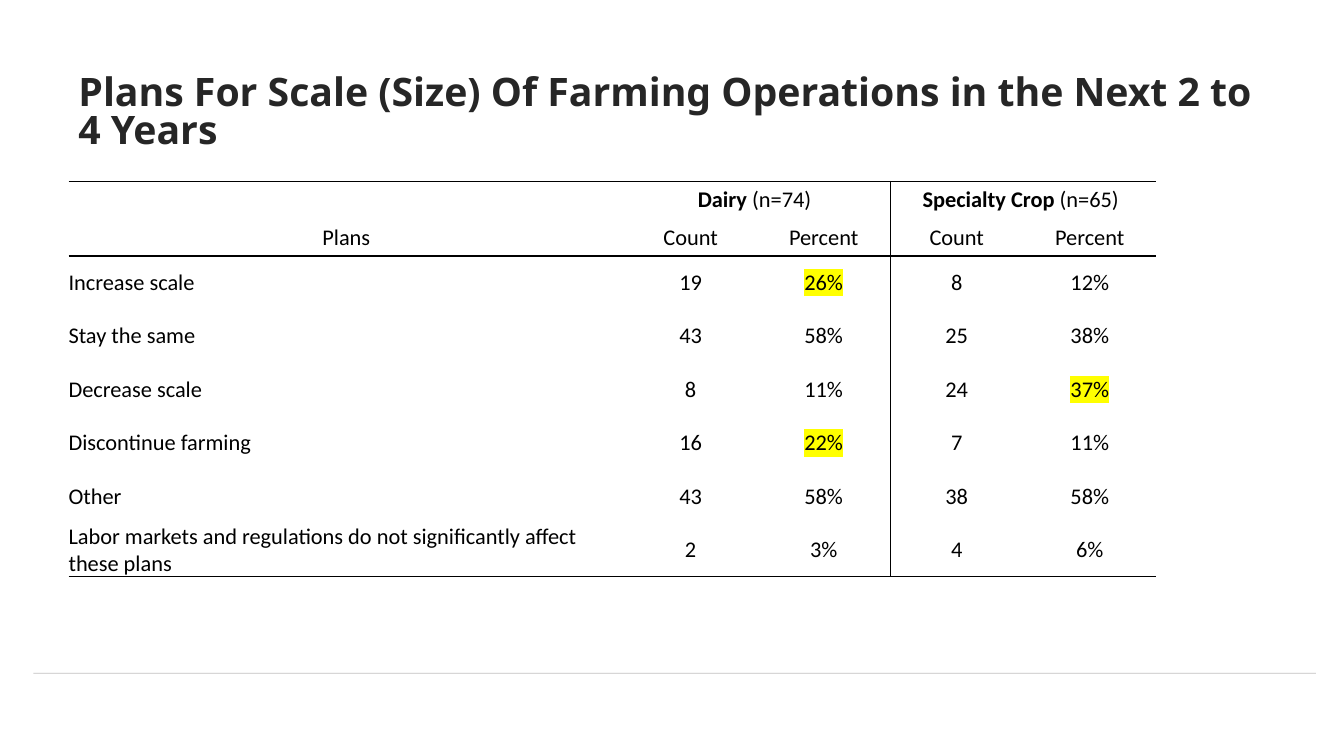
from lxml import etree
from pptx import Presentation
from pptx.dml.color import RGBColor
from pptx.enum.shapes import MSO_CONNECTOR
from pptx.enum.text import MSO_ANCHOR, PP_ALIGN
from pptx.oxml.ns import qn
from pptx.util import Inches, Pt

STRAIGHT = MSO_CONNECTOR.STRAIGHT
TOP, MIDDLE = MSO_ANCHOR.TOP, MSO_ANCHOR.MIDDLE
LEFT, CENTER = PP_ALIGN.LEFT, PP_ALIGN.CENTER
BLACK = RGBColor(0x00, 0x00, 0x00)
CHARCOAL = RGBColor(0x26, 0x26, 0x26)
GRAY = RGBColor(0xAF, 0xAB, 0xAB)
YELLOW = RGBColor(0xFF, 0xFF, 0x00)
PLAIN_STYLE = "{2D5ABB26-0587-4C30-8999-92F81FD0307C}"

MARGIN = 0.68
COLUMN_WIDTHS = [5.51] + [1.32] * 4
HEADER_ROWS, HEADER_HEIGHT, BODY_HEIGHT = 2, 0.37, 0.53
GROUPS = {1: ("Dairy ", "(n=74) "), 3: ("Specialty Crop ", "(n=65) ")}
HEADINGS = ["Plans", "Count", "Percent", "Count", "Percent"]
PLANS = [
    ["Increase scale", "19", "26%", "8", "12%"],
    ["Stay the same", "43", "58%", "25", "38%"],
    ["Decrease scale", "8", "11%", "24", "37%"],
    ["Discontinue farming", "16", "22%", "7", "11%"],
    ["Other", "43", "58%", "38", "58%"],
    ["Labor markets and regulations do not significantly affect these plans",
     "2", "3%", "4", "6%"],
]
HIGHLIGHTED = {(2, 2), (4, 4), (5, 2)}


def add_run(para, text, size, font, color, bold=False, highlight=None):
    """Append one formatted run to a paragraph."""
    span = para.add_run()
    span.text = text
    span.font.size = Pt(size)
    span.font.bold = bold
    span.font.color.rgb = color
    span.font.name = font
    if highlight is not None:
        mark = etree.Element(qn("a:highlight"))
        etree.SubElement(mark, qn("a:srgbClr"), val=str(highlight))
        span.font.fill._xPr.find(qn("a:solidFill")).addnext(mark)


def add_title(page, text):
    """Add the slide heading."""
    box = page.shapes.add_textbox(
        Inches(MARGIN), Inches(0.7), Inches(11.97), Inches(1.25))
    frame = box.text_frame
    frame.word_wrap = True
    frame.vertical_anchor = TOP
    para = frame.paragraphs[0]
    para.line_spacing = 0.81
    add_run(para, text, 28, "Noto Sans", CHARCOAL, bold=True)


def add_footer_rule(page):
    """Draw the faint line above the footer."""
    height = Inches(6.68)
    rule = page.shapes.add_connector(
        STRAIGHT, Inches(0.33), height, Inches(13.05), height)
    rule.line.color.rgb = GRAY
    rule.line.width = Pt(0.5)
    color = rule.line._ln.find(".//" + qn("a:srgbClr"))
    etree.SubElement(color, qn("a:alpha"), val="75000")
    etree.SubElement(rule._element.spPr, qn("a:effectLst"))


def set_borders(cell, widths):
    """Set the four cell borders, with no line on sides that have no width."""
    properties = cell._tc.get_or_add_tcPr()
    for side in "LRTB":
        width = widths.get(side, 0)
        line = etree.SubElement(properties, qn("a:ln" + side), w=str(Pt(width)))
        if width:
            fill = etree.SubElement(line, qn("a:solidFill"))
            etree.SubElement(fill, qn("a:srgbClr"), val=str(BLACK))
        else:
            etree.SubElement(line, qn("a:noFill"))


def border_widths(row, column, last_row):
    """Give the border widths that a grid position calls for."""
    widths = {}
    if row in (0, HEADER_ROWS):
        widths["T"] = 1
    if row in (HEADER_ROWS - 1, last_row):
        widths["B"] = 1
    if column == 2 or (row == 0 and column == 1):
        widths["R"] = 0.5
    if column == 3:
        widths["L"] = 0.5
    return widths


def fill_cell(cell, row, column, text):
    """Write one table cell."""
    cell.vertical_anchor = MIDDLE
    if row >= HEADER_ROWS or not text:
        cell.margin_left = cell.margin_right = 0
        cell.margin_top = cell.margin_bottom = 0
    para = cell.text_frame.paragraphs[0]
    is_label = row >= HEADER_ROWS and column == 0
    para.alignment = LEFT if is_label else CENTER
    if row == 0 and column in GROUPS:
        name, sample = GROUPS[column]
        add_run(para, name, 16, "Calibri", BLACK, bold=True)
        add_run(para, sample, 16, "Calibri", BLACK)
    elif text:
        highlight = YELLOW if (row, column) in HIGHLIGHTED else None
        add_run(para, text, 16, "Calibri", BLACK, highlight=highlight)


def add_plans_table(page):
    """Add the table of plans by farm type."""
    group_row = ["".join(GROUPS.get(column, ())) for column in range(5)]
    content = [group_row, HEADINGS] + PLANS
    heights = [HEADER_HEIGHT] * HEADER_ROWS + [BODY_HEIGHT] * len(PLANS)
    table = page.shapes.add_table(
        len(content), len(COLUMN_WIDTHS), Inches(MARGIN), Inches(1.8),
        Inches(sum(COLUMN_WIDTHS)), Inches(sum(heights))).table
    table.first_row = table.horz_banding = False
    table._tbl.tblPr.find(qn("a:tableStyleId")).text = PLAIN_STYLE
    for column, width in zip(table.columns, COLUMN_WIDTHS):
        column.width = Inches(width)
    for row, height in zip(table.rows, heights):
        row.height = Inches(height)
    for column in GROUPS:
        table.cell(0, column).merge(table.cell(0, column + 1))
    for row, texts in enumerate(content):
        for column, text in enumerate(texts):
            cell = table.cell(row, column)
            fill_cell(cell, row, column, text)
            set_borders(cell, border_widths(row, column, len(content) - 1))
            cell.fill.background()


def main():
    """Build and save the slide."""
    deck = Presentation()
    deck.slide_width, deck.slide_height = Inches(13.33), Inches(7.5)
    page = deck.slides.add_slide(deck.slide_layouts[6])
    add_footer_rule(page)
    add_title(page, "Plans For Scale (Size) Of Farming Operations "
                    "in the Next 2 to 4 Years")
    add_plans_table(page)
    deck.save("out.pptx")


if __name__ == "__main__":
    main()
